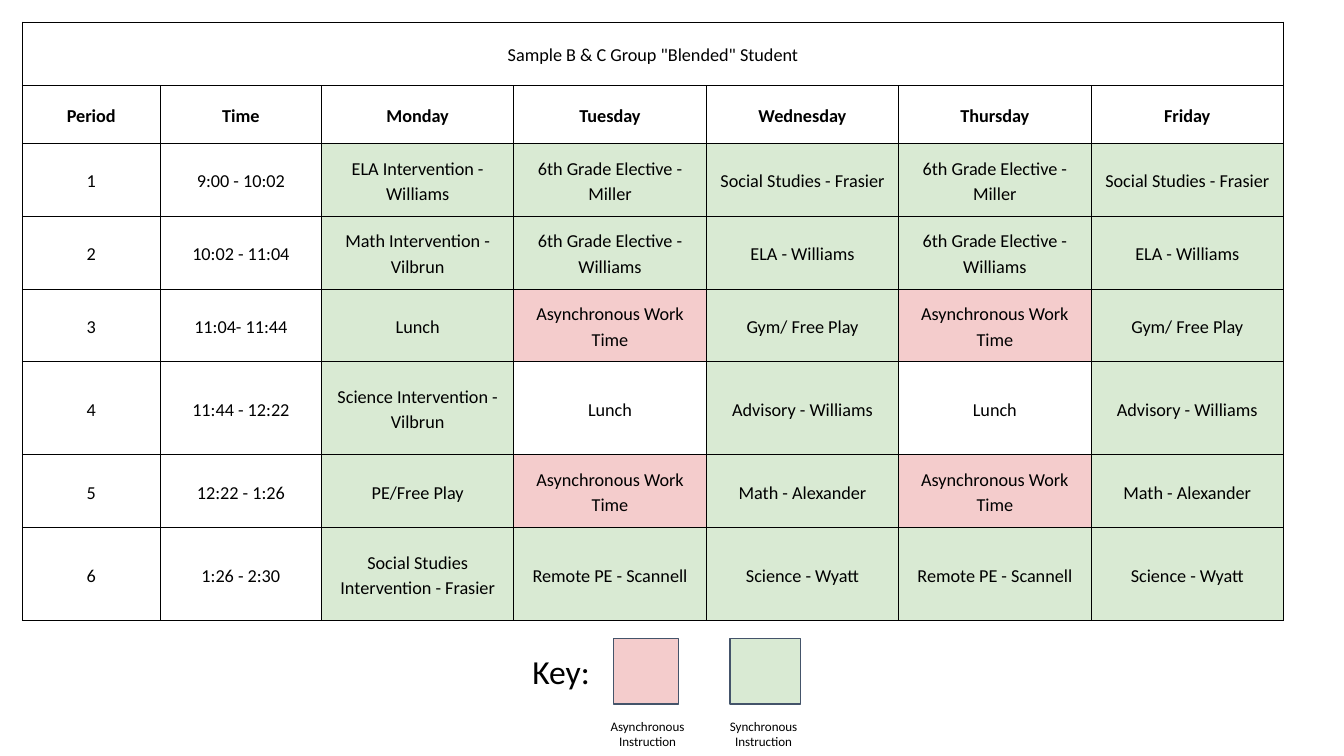
import pptx
import pptx.util
import pptx.dml.color
import pptx.enum.shapes
import pptx.enum.text
import pptx.oxml.ns
from lxml import etree

RGB = pptx.dml.color.RGBColor
BLACK = RGB(0x00, 0x00, 0x00)
GREEN = RGB(0xD9, 0xEA, 0xD3)
PINK = RGB(0xF4, 0xCC, 0xCC)
SLATE = RGB(0x44, 0x54, 0x6A)
FONT = "Calibri"
MIDDLE = pptx.enum.text.MSO_ANCHOR.MIDDLE
LEFT = pptx.enum.text.PP_ALIGN.LEFT
CENTER = pptx.enum.text.PP_ALIGN.CENTER
inch = pptx.util.Inches

COLS = [1.37, 1.6] + [1.91] * 5
ROWS = [0.63, 0.57, 0.72, 0.72, 0.72, 0.92, 0.72, 0.92]
TITLE = 'Sample B & C Group "Blended" Student'
HEADS = ["Period", "Time", "Monday", "Tuesday", "Wednesday", "Thursday", "Friday"]
ASYNC = "Asynchronous Work Time"
TIMES = ["9:00 - 10:02", "10:02 - 11:04", "11:04- 11:44",
         "11:44 - 12:22", "12:22 - 1:26", "1:26 - 2:30"]
MONDAY = ["ELA Intervention - Williams", "Math Intervention - Vilbrun", "Lunch",
          "Science Intervention - Vilbrun", "PE/Free Play",
          "Social Studies Intervention - Frasier"]
REMOTE = ["6th Grade Elective - Miller", "6th Grade Elective - Williams", ASYNC,
          "Lunch", ASYNC, "Remote PE - Scannell"]
ONSITE = ["Social Studies - Frasier", "ELA - Williams", "Gym/ Free Play",
          "Advisory - Williams", "Math - Alexander", "Science - Wyatt"]
PLAN = [MONDAY, REMOTE, ONSITE, REMOTE, ONSITE]


def write(frame, text, size, align=CENTER, bold=False, space=None):
    para = frame.paragraphs[0]
    para.alignment = align
    if space:
        para.line_spacing = space
    run = para.add_run()
    run.text = text
    run.font.name = FONT
    run.font.size = pptx.util.Pt(size)
    run.font.bold = bold
    run.font.color.rgb = BLACK


def border(cell):
    props = cell._tc.get_or_add_tcPr()
    for side in ("a:lnL", "a:lnR", "a:lnT", "a:lnB"):
        line = etree.SubElement(props, pptx.oxml.ns.qn(side), w=str(pptx.util.Pt(0.75)))
        fill = etree.SubElement(line, pptx.oxml.ns.qn("a:solidFill"))
        etree.SubElement(fill, pptx.oxml.ns.qn("a:srgbClr"), val=str(BLACK))


def style(cell, tint):
    cell.vertical_anchor = MIDDLE
    cell.margin_left = cell.margin_right = inch(0.04)
    cell.margin_top = cell.margin_bottom = inch(0.03)
    border(cell)
    if tint is None:
        cell.fill.background()
    else:
        cell.fill.solid()
        cell.fill.fore_color.rgb = tint


def shade(text, row, col):
    if row < 2 or col < 2:
        return None
    if text == ASYNC:
        return PINK
    if text == "Lunch" and PLAN[col - 2] is REMOTE:
        return None
    return GREEN


def timetable(slide, x, y, w, h):
    frame = slide.shapes.add_table(len(ROWS), len(COLS), inch(x), inch(y), inch(w), inch(h))
    table = frame.table
    table.first_row = table.horz_banding = False
    for col, part in zip(table.columns, COLS):
        col.width = inch(w * part / sum(COLS))
    for row, part in zip(table.rows, ROWS):
        row.height = inch(h * part / sum(ROWS))
    table.cell(0, 0).merge(table.cell(0, len(COLS) - 1))
    lines = [[TITLE] + [""] * (len(COLS) - 1), HEADS]
    for i, time in enumerate(TIMES):
        lines.append([str(i + 1), time] + [day[i] for day in PLAN])
    for r, line in enumerate(lines):
        for c, text in enumerate(line):
            cell = table.cell(r, c)
            style(cell, shade(text, r, c))
            if text:
                write(cell.text_frame, text, 13, bold=r == 1, space=1.15)


def label(slide, text, x, y, w, h, size, align=CENTER):
    frame = slide.shapes.add_textbox(inch(x), inch(y), inch(w), inch(h)).text_frame
    frame.word_wrap = True
    frame.vertical_anchor = MIDDLE
    frame.margin_left = frame.margin_right = inch(0.13)
    frame.margin_top = frame.margin_bottom = inch(0.13)
    write(frame, text, size, align)


def swatch(slide, x, y, w, h, tint):
    kind = pptx.enum.shapes.MSO_SHAPE.RECTANGLE
    shape = slide.shapes.add_shape(kind, inch(x), inch(y), inch(w), inch(h))
    shape.shadow.inherit = False
    shape.fill.solid()
    shape.fill.fore_color.rgb = tint
    shape.line.color.rgb = SLATE
    shape.line.width = pptx.util.Pt(0.75)


def legend(slide, x, y, w, h):
    label(slide, "Key:", x, y + 0.15 * h, 0.31 * w, 0.29 * h, 24, LEFT)
    items = [("Asynchronous Instruction", PINK, 0.31, 0.21, 0.22),
             ("Synchronous Instruction", GREEN, 0.69, 0.23, 0.6)]
    for text, tint, left, wide, start in items:
        swatch(slide, x + left * w, y, wide * w, 0.59 * h, tint)
        label(slide, text, x + start * w, y + 0.71 * h, 0.4 * w, 0.29 * h, 9.3)


def main():
    deck = pptx.Presentation()
    deck.slide_width = inch(13.33)
    deck.slide_height = inch(7.5)
    slide = deck.slides.add_slide(deck.slide_layouts[6])
    timetable(slide, 0.22, 0.22, 12.51, 5.94)
    legend(slide, 5.15, 6.33, 3.03, 1.11)
    deck.save("out.pptx")


if __name__ == "__main__":
    main()
